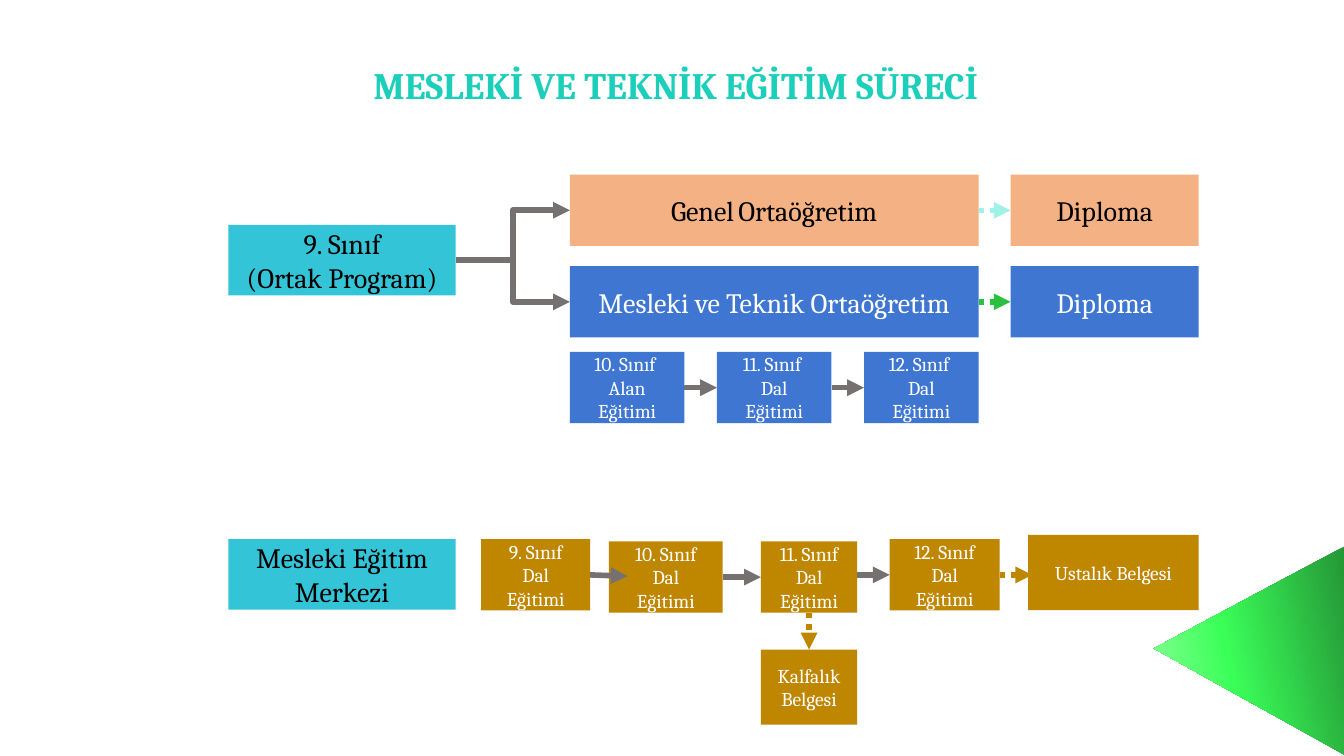
from dataclasses import dataclass
from lxml.etree import SubElement
from pptx import Presentation
from pptx.dml.color import RGBColor
from pptx.enum.dml import MSO_LINE
from pptx.enum.shapes import MSO_CONNECTOR, MSO_SHAPE
from pptx.enum.text import MSO_ANCHOR, PP_ALIGN
from pptx.oxml import parse_xml
from pptx.oxml.ns import nsdecls, qn
from pptx.util import Pt


@dataclass(frozen=True)
class Theme:
    font: str = "Cambria"
    title: str = "1CCFBA"
    peach: str = "F4B183"
    blue: str = "3E76D2"
    cyan: str = "34C4D8"
    gold: str = "BF8600"
    gray: str = "767171"
    mint: str = "9EF2E8"
    green: str = "2BC042"
    dark: str = "000000"
    light: str = "FFFFFF"
    fade: tuple = ((0, "249636"), (60, "3BFF59"), (100, "8EFF9A"))
    head: float = 20
    big: float = 15
    small: float = 10.5


T = Theme()
deck = Presentation()
deck.slide_width, deck.slide_height = Pt(720), Pt(405)
slide = deck.slides.add_slide(deck.slide_layouts[5])


def write(frame, paras, ink, bold=False):
    """Fill a frame with centred paragraphs, each a list of (text, size) runs."""
    frame.word_wrap = True
    frame.vertical_anchor = MSO_ANCHOR.MIDDLE
    for i, runs in enumerate(paras):
        para = frame.add_paragraph() if i else frame.paragraphs[0]
        para.alignment = PP_ALIGN.CENTER
        for text, size in runs:
            run = para.add_run()
            run.text = text
            font = run.font
            font.name, font.size, font.bold = T.font, Pt(size), bold
            font.color.rgb = RGBColor.from_string(ink)


# Corner triangle with a gradient
corner = slide.shapes.add_shape(
    MSO_SHAPE.ISOSCELES_TRIANGLE, Pt(613.4), Pt(297.4), Pt(111.6), Pt(102.2))
corner.rotation = 270
corner.adjustments[0] = 0.51
corner.shadow.inherit = False
corner.line.fill.background()
stops = "".join(f'<a:gs pos="{pos * 1000}"><a:srgbClr val="{color}"/></a:gs>'
                for pos, color in T.fade)
props = corner.element.spPr
props.find(qn("a:prstGeom")).addnext(parse_xml(
    f'<a:gradFill rotWithShape="1" {nsdecls("a")}><a:gsLst>{stops}</a:gsLst>'
    '<a:lin ang="15480000" scaled="0"/></a:gradFill>'))

# Title
title = slide.shapes.title
title.left, title.top, title.width, title.height = Pt(149), Pt(20.9), Pt(426.2), Pt(51.8)
write(title.text_frame, [[("MESLEKİ VE TEKNİK EĞİTİM SÜRECİ", T.head)]], T.title, True)
title.text_frame.paragraphs[0].line_spacing = 0.9

# Boxes: name, left, top, width, height, fill, ink, paragraphs
left, mid, right = 122.4, 305.3, 541.4
wide, full, last = 121.7, 219, 100.8
row, low, tall = 38.2, 290.1, 40.3
genel = [("Genel", T.big), (" ", T.small), ("Ortaöğretim", T.big)]
diploma = [[("Diploma", T.big)]]
boxes = [
    ("genel", mid, 93.6, full, row, T.peach, T.dark, [genel]),
    ("meslek", mid, 142.6, full, row, T.blue, T.light,
     [[("Mesleki ve Teknik Ortaöğretim", T.big)]]),
    ("ortak", left, 120.5, wide, 37.8, T.cyan, T.dark,
     [[("9. Sınıf", T.big)], [("(Ortak Program)", T.big)]]),
    ("merkez", left, 288.8, wide, 37.8, T.cyan, T.dark,
     [[("Mesleki Eğitim Merkezi", T.big)]]),
    ("dip1", right, 93.6, last, row, T.peach, T.dark, diploma),
    ("dip2", right, 142.6, last, row, T.blue, T.light, diploma),
    ("usta", 550.8, 286.6, 91.4, tall, T.gold, T.light,
     [[("Ustalık Belgesi", T.small)]]),
    ("kalfa", 407.6, 348, 51.7, tall, T.gold, T.light,
     [[("Kalfalık Belgesi", T.small)]]),
]

# Class years of the school track, evenly spaced under the wide box
for i, kind in enumerate(("Alan", "Dal", "Dal")):
    boxes.append((f"okul{10 + i}", mid + 78.8 * i, 188.6, 61.4, row, T.blue, T.light,
                  [[(f"{10 + i}. Sınıf ", T.small)], [(f"{kind} Eğitimi", T.small)]]))

# Class years of the training centre
years = [(257.8, 288.9, 58.3), (326.2, low, 61), (407.6, low, 51.7), (476.6, 288.9, 59)]
for year, (x, y, w) in enumerate(years, 9):
    boxes.append((f"mem{year}", x, y, w, row, T.gold, T.light,
                  [[(f"{year}. Sınıf", T.small)], [("Dal Eğitimi", T.small)]]))

made = {}
for name, x, y, w, h, fill, ink, paras in boxes:
    box = slide.shapes.add_shape(MSO_SHAPE.RECTANGLE, Pt(x), Pt(y), Pt(w), Pt(h))
    box.shadow.inherit = False
    box.fill.solid()
    box.fill.fore_color.rgb = RGBColor.from_string(fill)
    box.line.fill.background()
    write(box.text_frame, paras, ink)
    made[name] = box

# Arrows: each end is a (box, side) joint or a free (x, y) point
arrows = [
    (("ortak", 3), ("genel", 1), T.gray, False),
    (("ortak", 3), ("meslek", 1), T.gray, False),
    (("okul10", 3), ("okul11", 1), T.gray, False),
    (("okul11", 3), ("okul12", 1), T.gray, False),
    (("genel", 3), ("dip1", 1), T.mint, True),
    (("meslek", 3), ("dip2", 1), T.green, True),
    (("mem9", 3), (336.2, 308.7), T.gray, False),
    (("mem10", 3), ("mem11", 1), T.gray, False),
    ((459.3, 308), ("mem12", 1), T.gray, False),
    (("mem12", 3), (553, 308), T.gold, True),
    (("mem11", 2), ("kalfa", 0), T.gold, True),
]
for start, end, color, dots in arrows:
    kind = MSO_CONNECTOR.ELBOW if start[0] == "ortak" else MSO_CONNECTOR.STRAIGHT
    ends = [(0, 0) if p[0] in made else p for p in (start, end)]
    link = slide.shapes.add_connector(kind, *(Pt(v) for p in ends for v in p))
    if start[0] in made:
        link.begin_connect(made[start[0]], start[1])
    if end[0] in made:
        link.end_connect(made[end[0]], end[1])
    link.line.width = Pt(3)
    link.line.color.rgb = RGBColor.from_string(color)
    if dots:
        link.line.dash_style = MSO_LINE.ROUND_DOT
    props = link.element.spPr
    SubElement(props.find(qn("a:ln")), qn("a:tailEnd"), type="triangle")
    SubElement(props, qn("a:effectLst"))

deck.save("out.pptx")
